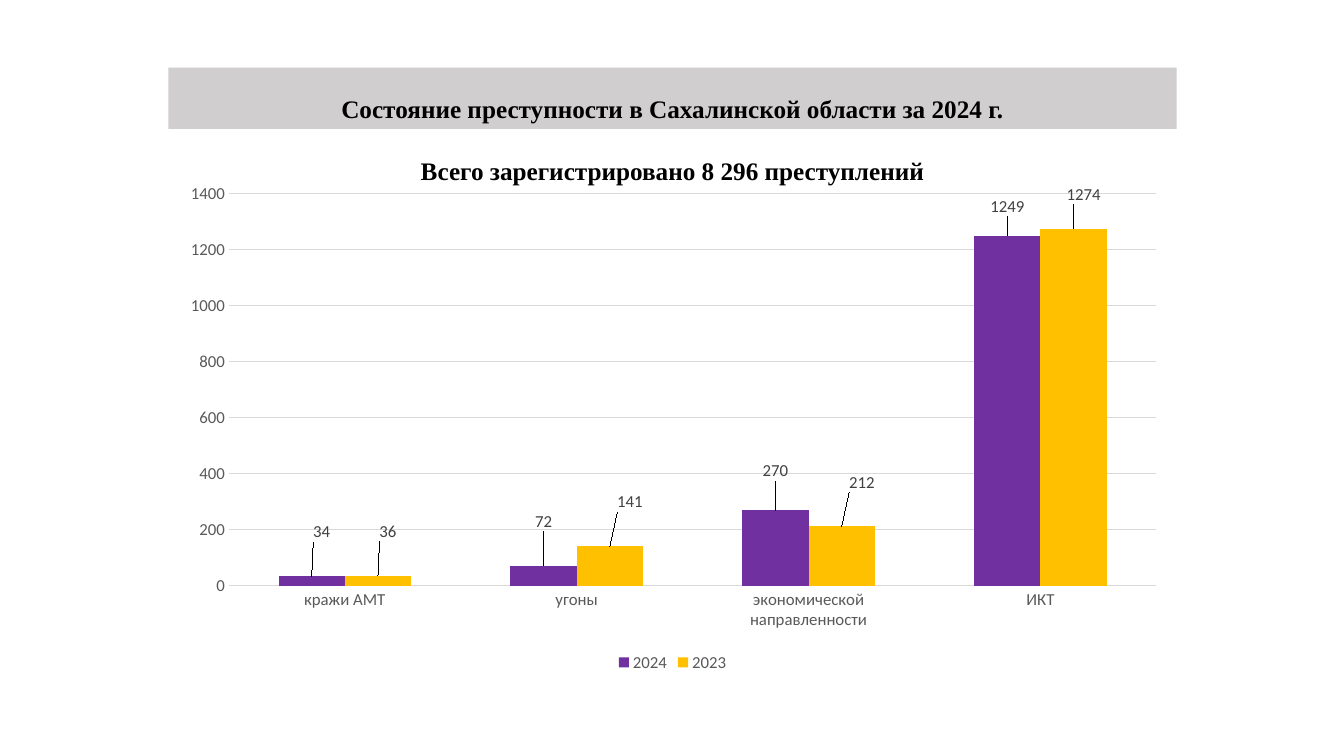
from lxml import etree
from pptx import Presentation
from pptx.chart.data import CategoryChartData
from pptx.dml.color import RGBColor
from pptx.enum.chart import XL_CHART_TYPE as ChartType, XL_LABEL_POSITION as LabelPosition
from pptx.enum.chart import XL_LEGEND_POSITION as LegendPosition, XL_TICK_MARK as TickMark
from pptx.enum.shapes import MSO_SHAPE as Preset
from pptx.enum.text import MSO_ANCHOR as Anchor, PP_ALIGN as Align
from pptx.oxml.ns import qn
from pptx.util import Inches, Pt

TITLE = "Состояние преступности в Сахалинской области за 2024 г."
SUBTITLE = "Всего зарегистрировано 8 296 преступлений"
CATEGORIES = ["кражи АМТ", "угоны", "экономической направленности", "ИКТ"]
SERIES = [
    {"name": "2024", "color": "purple", "values": [34, 72, 270, 1249],
     "label_shifts": [(0.01, -0.06), (0, -0.06), (0, -0.05), (0, -0.03)]},
    {"name": "2023", "color": "gold", "values": [36, 141, 212, 1274],
     "label_shifts": [(0.01, -0.06), (0.02, -0.06), (0.02, -0.06), (0.01, -0.04)]},
]
COLORS = {"band": "D0CECE", "title": "000000", "axis": "595959", "label": "404040",
          "grid": "D9D9D9", "purple": "7030A0", "gold": "FFC000"}
LEFT, WIDTH = 1.67, 10
PLOT_AREA = {"x": 0.06, "y": 0.04, "w": 0.92, "h": 0.78}


def color(name):
    return RGBColor.from_string(COLORS[name])


def set_font(font, size, color_name, name="Calibri", bold=False):
    font.size, font.name, font.bold = Pt(size), name, bold
    font.color.rgb = color(color_name)


def add_text(shape, text, size=18, anchor=Anchor.TOP, line_spacing=0.9, space_before=0):
    frame = shape.text_frame
    frame.word_wrap, frame.vertical_anchor = True, anchor
    paragraph = frame.paragraphs[0]
    paragraph.alignment = Align.CENTER
    paragraph.line_spacing, paragraph.space_before = line_spacing, Pt(space_before)
    run = paragraph.add_run()
    run.text = text
    set_font(run.font, size, "title", "Times New Roman", True)


def set_layout(layout, **values):
    manual = etree.SubElement(layout, qn("c:manualLayout"))
    for tag, value in values.items():
        etree.SubElement(manual, qn(f"c:{tag}")).set("val", str(value))


def style_axis(axis):
    axis.major_tick_mark = axis.minor_tick_mark = TickMark.NONE
    axis.format.line.fill.background()
    set_font(axis.tick_labels.font, 12, "axis")


def style_series(series, content):
    series.format.fill.solid()
    series.format.fill.fore_color.rgb = color(content["color"])
    labels = series.data_labels
    labels.show_value = True
    labels.position = LabelPosition.OUTSIDE_END
    set_font(labels.font, 12, "label")
    for index, (x, y) in enumerate(content["label_shifts"]):
        label = series.points[index].data_label
        set_font(label.font, 12, "label")
        label.position = LabelPosition.OUTSIDE_END
        layout = etree.Element(qn("c:layout"))
        set_layout(layout, x=x, y=y)
        labels._element.findall(qn("c:dLbl"))[index].insert(1, layout)


def add_crime_chart(slide):
    data = CategoryChartData()
    data.categories = CATEGORIES
    for content in SERIES:
        data.add_series(content["name"], content["values"])
    chart = slide.shapes.add_chart(ChartType.COLUMN_CLUSTERED, Inches(LEFT), Inches(1.72),
                                   Inches(WIDTH), Inches(4.99), data).chart
    set_font(chart.font, 10, "title")
    chart.has_title = False
    chart.has_legend = True
    chart.legend.position = LegendPosition.BOTTOM
    chart.legend.include_in_layout = False
    set_font(chart.legend.font, 12, "axis")

    plot = chart.plots[0]
    plot.gap_width, plot.overlap, plot.vary_by_categories = 150, 0, False
    for series, content in zip(plot.series, SERIES):
        style_series(series, content)

    for axis in (chart.category_axis, chart.value_axis):
        style_axis(axis)
    value_axis = chart.value_axis
    value_axis.minimum_scale, value_axis.maximum_scale, value_axis.major_unit = 0, 1400, 200
    grid = value_axis.major_gridlines.format.line
    grid.color.rgb, grid.width = color("grid"), Pt(0.75)

    plot_area = chart._chartSpace.chart.plotArea
    layout = plot_area.find(qn("c:layout"))
    if layout is None:
        layout = etree.Element(qn("c:layout"))
        plot_area.insert(0, layout)
    set_layout(layout, layoutTarget="inner", xMode="edge", yMode="edge", **PLOT_AREA)


def main():
    presentation = Presentation()
    presentation.slide_width, presentation.slide_height = Inches(13.33), Inches(7.5)
    slide = presentation.slides.add_slide(presentation.slide_layouts[6])

    band = slide.shapes.add_shape(Preset.RECTANGLE, Inches(LEFT), Inches(0.67),
                                  Inches(WIDTH), Inches(0.61))
    band.shadow.inherit = False
    band.fill.solid()
    band.fill.fore_color.rgb = color("band")
    band.line.fill.background()
    add_text(band, TITLE, anchor=Anchor.BOTTOM)

    subtitle = slide.shapes.add_textbox(Inches(LEFT), Inches(1.55), Inches(WIDTH), Inches(0.36))
    add_text(subtitle, SUBTITLE, line_spacing=0.8, space_before=10)

    add_crime_chart(slide)
    presentation.save("out.pptx")


if __name__ == "__main__":
    main()
